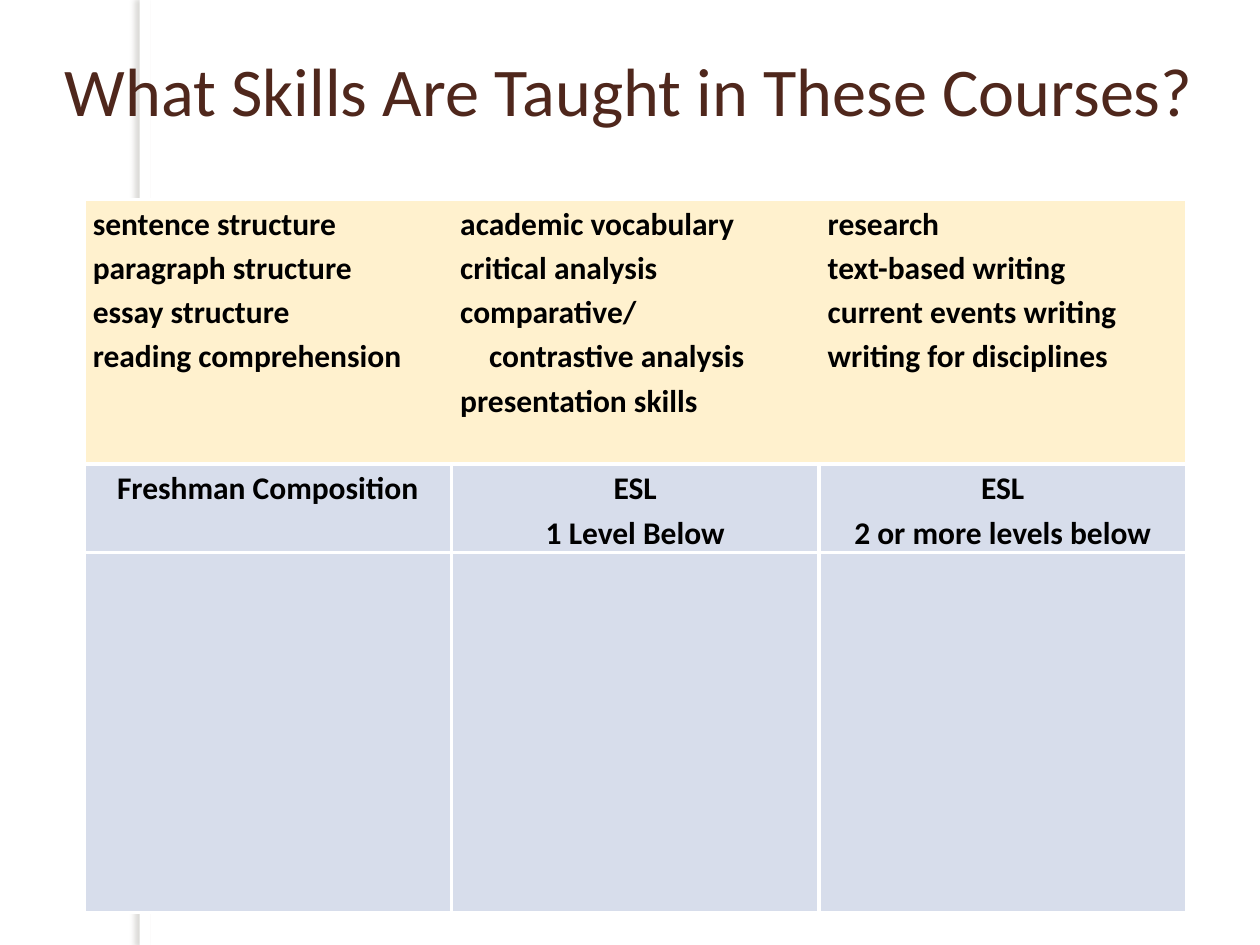
import lxml.etree
import pptx
import pptx.dml.color
import pptx.enum.shapes
import pptx.enum.text
import pptx.oxml
import pptx.oxml.ns
import pptx.util

RGBColor = pptx.dml.color.RGBColor
WHITE = RGBColor(0xFF, 0xFF, 0xFF)
BLACK = RGBColor(0x00, 0x00, 0x00)
BROWN = RGBColor(0x4F, 0x27, 0x1C)
CREAM = RGBColor(0xFF, 0xF1, 0xCE)
PALE_BLUE = RGBColor(0xD7, 0xDD, 0xEB)
SHADOW = RGBColor(0x73, 0x6F, 0x63)

LEFT = pptx.enum.text.PP_ALIGN.LEFT
CENTER = pptx.enum.text.PP_ALIGN.CENTER
INDENTED = "contrastive analysis"

SKILLS = [
    ["sentence structure", "paragraph structure", "essay structure", "reading comprehension"],
    ["academic vocabulary", "critical analysis", "comparative/", INDENTED, "presentation skills"],
    ["research", "text-based writing", "current events writing", "writing for disciplines"],
]
COURSES = [
    ["Freshman Composition"],
    ["ESL", "1 Level Below"],
    ["ESL", "2 or more levels below"],
]
TABLE_ROWS = [
    (25.2, SKILLS, CREAM, LEFT, False),
    (8.4, COURSES, PALE_BLUE, CENTER, True),
    (34.3, [[], [], []], PALE_BLUE, CENTER, True),
]


class SlideBuilder:
    """Draws styled elements on one slide, on a grid of 120 columns by 90 rows."""

    font_name = "Calibri"
    columns, rows = 120, 90

    def __init__(self, presentation):
        self.slide = presentation.slides.add_slide(presentation.slide_layouts[6])
        self.column = presentation.slide_width / self.columns
        self.row = presentation.slide_height / self.rows

    def box(self, left, top, width, height):
        return [round(length) for length in (
            left * self.column, top * self.row, width * self.column, height * self.row)]

    def style(self, paragraph, size, color, bold=False):
        for run in paragraph.runs:
            run.font.name = self.font_name
            run.font.size = pptx.util.Pt(size)
            run.font.bold = bold
            run.font.color.rgb = color

    def band(self, *place):
        shape = self.slide.shapes.add_shape(
            pptx.enum.shapes.MSO_SHAPE.RECTANGLE, *self.box(*place))
        shape.fill.solid()
        shape.fill.fore_color.rgb = WHITE
        shape.line.fill.background()
        shape.shadow.inherit = False
        effects = shape._element.spPr.find(pptx.oxml.ns.qn("a:effectLst"))
        effects.append(pptx.oxml.parse_xml(
            f'<a:outerShdw {pptx.oxml.ns.nsdecls("a")} blurRad="{pptx.util.Pt(3)}" '
            f'dist="{pptx.util.Pt(3)}" dir="10800000" algn="tl" rotWithShape="0">'
            f'<a:srgbClr val="{SHADOW}"><a:alpha val="25000"/></a:srgbClr></a:outerShdw>'))

    def title(self, text, *place):
        text_frame = self.slide.shapes.add_textbox(*self.box(*place)).text_frame
        text_frame.word_wrap = True
        text_frame.text = text
        self.style(text_frame.paragraphs[0], 39, BROWN)

    def border(self, cell, side, visible):
        properties = cell._tc.get_or_add_tcPr()
        line = lxml.etree.SubElement(properties, pptx.oxml.ns.qn(f"a:ln{side}"))
        line.set("w", str(pptx.util.Pt(2.25)))
        if visible:
            fill = lxml.etree.SubElement(line, pptx.oxml.ns.qn("a:solidFill"))
            lxml.etree.SubElement(fill, pptx.oxml.ns.qn("a:srgbClr")).set("val", str(WHITE))
        else:
            lxml.etree.SubElement(line, pptx.oxml.ns.qn("a:noFill"))

    def cell(self, cell, lines, color, alignment, sides):
        for side, visible in sides.items():
            self.border(cell, side, visible)
        cell.fill.solid()
        cell.fill.fore_color.rgb = color
        cell.margin_left = cell.margin_right = pptx.util.Inches(0.07)
        cell.margin_top = cell.margin_bottom = 0
        cell.text_frame.text = "\n".join(lines)
        for paragraph in cell.text_frame.paragraphs:
            paragraph.alignment = alignment
            paragraph.line_spacing = 1.15
            self.style(paragraph, 18, BLACK, bold=True)
            if paragraph.text == INDENTED:
                indent = pptx.util.Inches(0.23)
                paragraph._p.get_or_add_pPr().set("marL", str(indent))

    def table(self, left, top, width, table_rows):
        height = sum(table_row[0] for table_row in table_rows)
        count = len(table_rows[0][1])
        table = self.slide.shapes.add_table(
            len(table_rows), count, *self.box(left, top, width, height)).table
        table.first_row = table.horz_banding = False
        for row, (row_height, cells, color, alignment, divided) in zip(table.rows, table_rows):
            row.height = round(row_height * self.row)
            for index, (cell, lines) in enumerate(zip(row.cells, cells)):
                sides = {"L": divided or index == 0, "R": divided or index == count - 1,
                         "T": True, "B": True}
                self.cell(cell, lines, color, alignment, sides)


def main():
    presentation = pptx.Presentation()
    presentation.slide_width = pptx.util.Inches(10)
    presentation.slide_height = pptx.util.Inches(7.5)
    builder = SlideBuilder(presentation)
    builder.band(13.3, 0, 1, 90)
    builder.table(8, 19, 105, TABLE_ROWS)
    builder.title("What Skills Are Taught in These Courses?", 5, 4, 113, 9)
    presentation.save("out.pptx")


if __name__ == "__main__":
    main()
